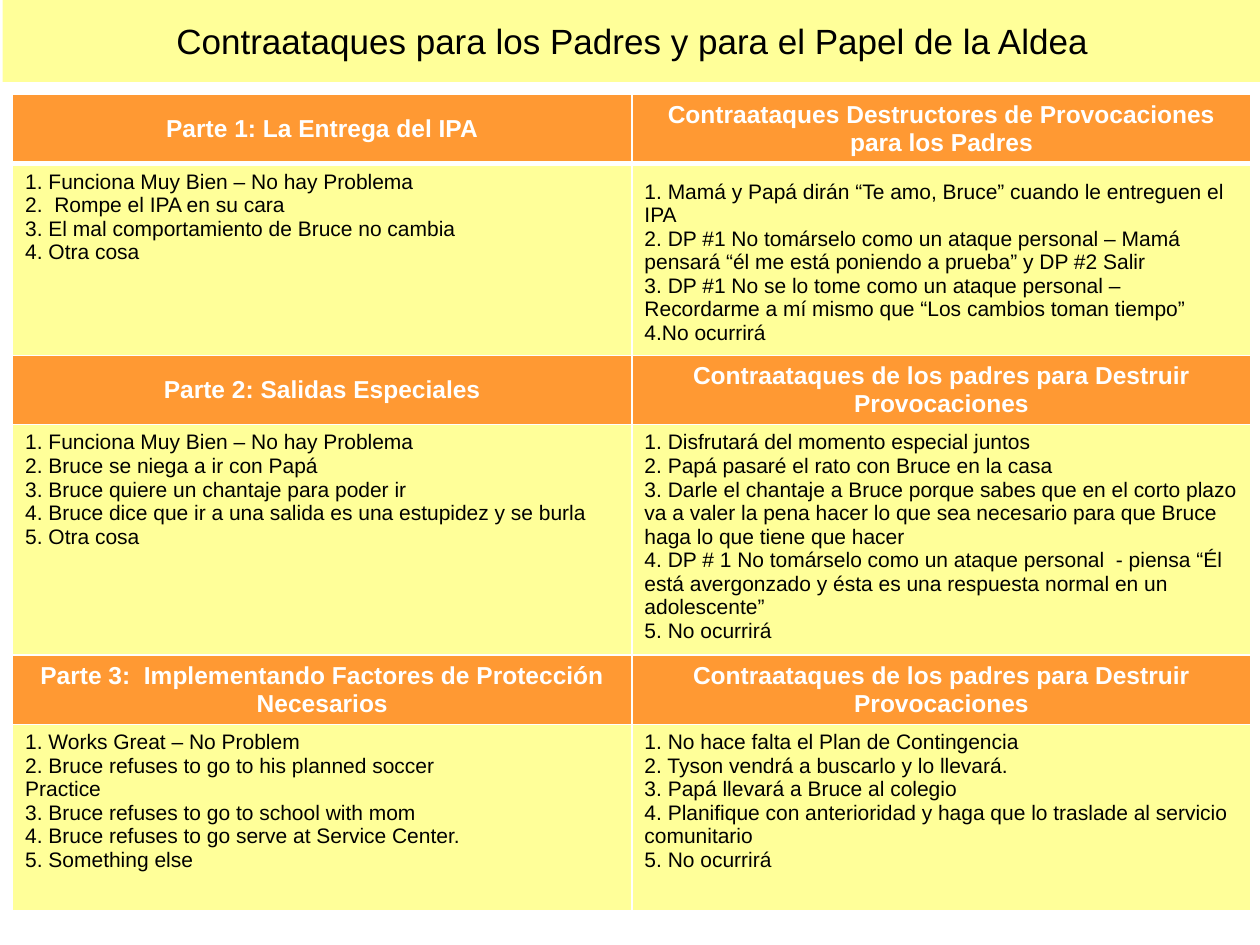
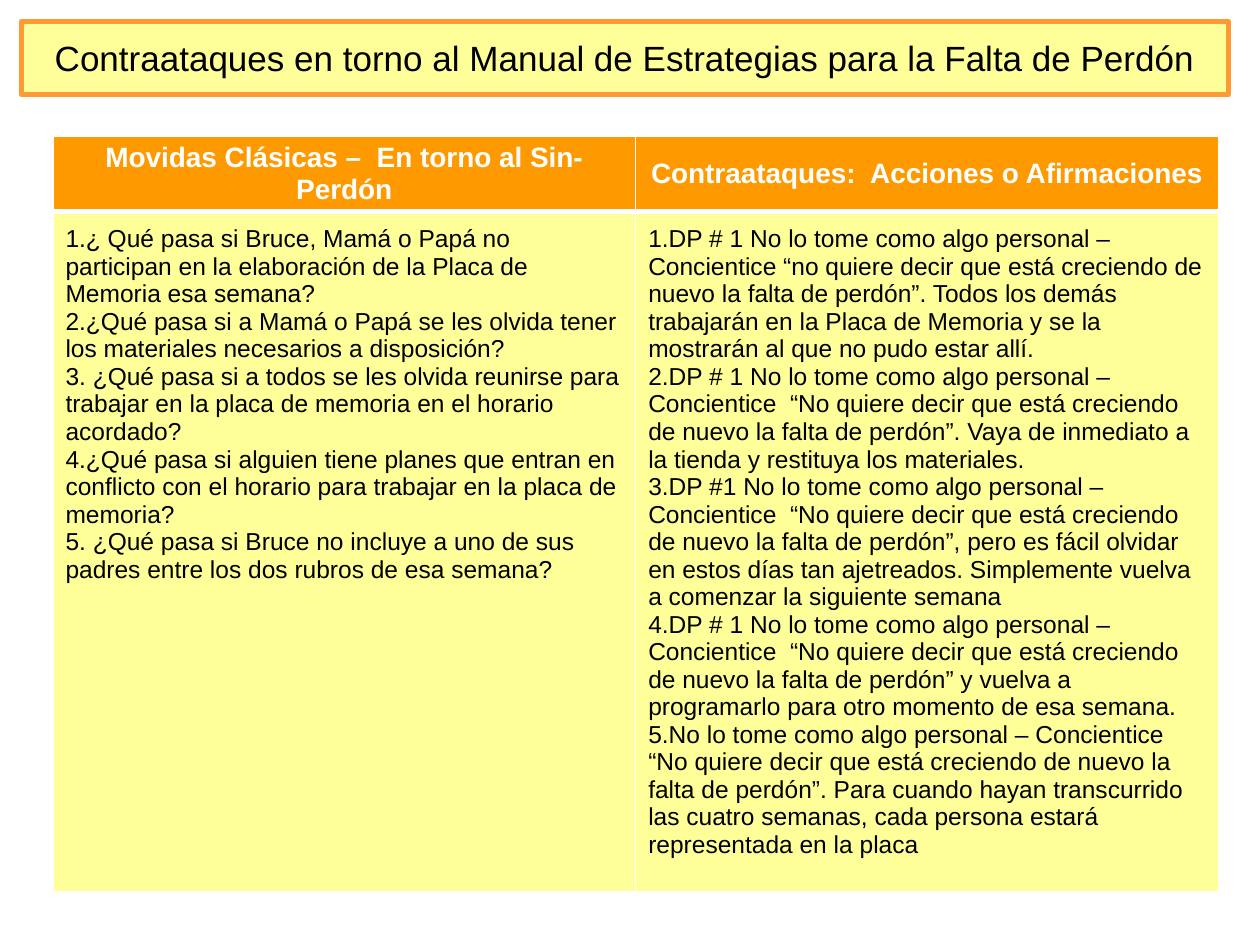
from dataclasses import dataclass

import pptx
import pptx.dml.color
import pptx.enum.text
import pptx.oxml
import pptx.oxml.ns
import pptx.util
from pptx.util import Inches, Length

FONT = "Arial"
COLORS = {
    "band": "FFFF99",
    "frame": "FF9933",
    "header": "FF9933",
    "header_bright": "FF9900",
    "title": "000000",
    "body": "000000",
    "header_text": "FFFFFF",
    "border": "FFFFFF",
}
TITLE_ONLY = 5
THIN, THICK = 1, 3  # border widths in points


@dataclass(frozen=True)
class Box:
    left: Length
    top: Length
    width: Length
    height: Length


@dataclass(frozen=True)
class Section:
    """A header row and the row of lists below it, left and right."""
    headers: tuple[str, str]
    lists: tuple[list[str], list[str]]
    list_height: Length
    top_margins: tuple[Length, Length] = (Inches(0.05), Inches(0.05))


@dataclass(frozen=True)
class TableStyle:
    header_color: str
    header_size: int
    body_size: int
    header_height: Length
    numbered: bool = False


def rgb(name: str) -> pptx.dml.color.RGBColor:
    return pptx.dml.color.RGBColor.from_string(COLORS[name])


def format_para(para, size: int, color: str, bold: bool, centered: bool) -> None:
    para.font.name = FONT
    para.font.size = pptx.util.Pt(size)
    para.font.bold = bold
    para.font.color.rgb = rgb(color)
    align = pptx.enum.text.PP_ALIGN
    para.alignment = align.CENTER if centered else align.LEFT


def number_para(para) -> None:
    """Number the paragraph automatically, with no indent."""
    properties = para._p.get_or_add_pPr()
    properties.set("marL", "0")
    properties.set("indent", "0")
    bullet = pptx.oxml.parse_xml(
        f'<a:buAutoNum {pptx.oxml.ns.nsdecls("a")} type="arabicPeriod"/>')
    properties.insert(0, bullet)


def set_borders(cell, top: int, bottom: int) -> None:
    properties = cell._tc.get_or_add_tcPr()
    sides = {"lnL": THIN, "lnR": THIN, "lnT": top, "lnB": bottom}
    for position, (side, points) in enumerate(sides.items()):
        line = pptx.oxml.parse_xml(
            f'<a:{side} {pptx.oxml.ns.nsdecls("a")} w="{pptx.util.Pt(points)}">'
            f'<a:solidFill><a:srgbClr val="{COLORS["border"]}"/></a:solidFill>'
            f'</a:{side}>')
        properties.insert(position, line)


def fill_cell(cell, texts: list[str], style: TableStyle, is_header: bool,
              top_margin: Length = Inches(0.05)) -> None:
    cell.fill.solid()
    cell.fill.fore_color.rgb = rgb(style.header_color if is_header else "band")
    cell.margin_left = cell.margin_right = Inches(0.1)
    cell.margin_top, cell.margin_bottom = top_margin, Inches(0.05)
    anchor = pptx.enum.text.MSO_ANCHOR
    cell.vertical_anchor = anchor.MIDDLE if is_header else anchor.TOP
    frame = cell.text_frame
    for index, text in enumerate(texts):
        para = frame.add_paragraph() if index else frame.paragraphs[0]
        para.text = text
        if is_header:
            format_para(para, style.header_size, "header_text", True, True)
        else:
            format_para(para, style.body_size, "body", False, False)
            if style.numbered:
                number_para(para)


def add_sections(page, box: Box, style: TableStyle, sections: list[Section]) -> None:
    table = page.shapes.add_table(2 * len(sections), 2, box.left, box.top,
                                  box.width, box.height).table
    table.horz_banding = False
    for column in table.columns:
        column.width = box.width // 2
    for index, section in enumerate(sections):
        header_row, list_row = 2 * index, 2 * index + 1
        table.rows[header_row].height = style.header_height
        table.rows[list_row].height = section.list_height
        rule = THIN if index else THICK
        for side in range(2):
            header = table.cell(header_row, side)
            fill_cell(header, [section.headers[side]], style, True)
            set_borders(header, THIN, rule)
            body = table.cell(list_row, side)
            fill_cell(body, section.lists[side], style, False,
                      section.top_margins[side])
            set_borders(body, rule, THIN)


def add_page(deck, title: str, box: Box, framed: bool):
    page = deck.slides.add_slide(deck.slide_layouts[TITLE_ONLY])
    band = page.shapes.title
    band.left, band.top, band.width, band.height = (
        box.left, box.top, box.width, box.height)
    band.fill.solid()
    band.fill.fore_color.rgb = rgb("band")
    if framed:
        band.line.color.rgb = rgb("frame")
        band.line.width = pptx.util.Pt(3)
    else:
        band.line.fill.background()
    band.text_frame.text = title
    band.text_frame.vertical_anchor = pptx.enum.text.MSO_ANCHOR.MIDDLE
    format_para(band.text_frame.paragraphs[0], 20, "title", False, True)
    return page


PARENT_COUNTERS = "Contraataques de los padres para Destruir Provocaciones"

VILLAGE_SECTIONS = [
    Section(
        ("Parte 1: La Entrega del IPA",
         "Contraataques Destructores de Provocaciones para los Padres"),
        (["1. Funciona Muy Bien – No hay Problema",
          "2.  Rompe el IPA en su cara",
          "3. El mal comportamiento de Bruce no cambia",
          "4. Otra cosa"],
         ["1. Mamá y Papá dirán “Te amo, Bruce” cuando le entreguen el IPA",
          "2. DP #1 No tomárselo como un ataque personal – Mamá pensará "
          "“él me está poniendo a prueba” y DP #2 Salir",
          "3. DP #1 No se lo tome como un ataque personal – Recordarme a mí "
          "mismo que “Los cambios toman tiempo”",
          "4.No ocurrirá"]),
        Inches(1.52), (Inches(0.05), Inches(0.13))),
    Section(
        ("Parte 2: Salidas Especiales", PARENT_COUNTERS),
        (["1. Funciona Muy Bien – No hay Problema",
          "2. Bruce se niega a ir con Papá",
          "3. Bruce quiere un chantaje para poder ir",
          "4. Bruce dice que ir a una salida es una estupidez y se burla",
          "5. Otra cosa"],
         ["1. Disfrutará del momento especial juntos",
          "2. Papá pasaré el rato con Bruce en la casa",
          "3. Darle el chantaje a Bruce porque sabes que en el corto plazo va a "
          "valer la pena hacer lo que sea necesario para que Bruce haga lo que "
          "tiene que hacer",
          "4. DP # 1 No tomárselo como un ataque personal  - piensa “Él está "
          "avergonzado y ésta es una respuesta normal en un adolescente”",
          "5. No ocurrirá"]),
        Inches(1.83)),
    Section(
        ("Parte 3:  Implementando Factores de Protección Necesarios",
         PARENT_COUNTERS),
        (["1. Works Great – No Problem",
          "2. Bruce refuses to go to his planned soccer",
          "Practice",
          "3. Bruce refuses to go to school with mom",
          "4. Bruce refuses to go serve at Service Center.",
          "5. Something else"],
         ["1. No hace falta el Plan de Contingencia",
          "2. Tyson vendrá a buscarlo y lo llevará.",
          "3. Papá llevará a Bruce al colegio",
          "4. Planifique con anterioridad y haga que lo traslade al servicio "
          "comunitario",
          "5. No ocurrirá"]),
        Inches(1.48)),
]

FORGIVENESS_SECTIONS = [
    Section(
        ("Movidas Clásicas –  En torno al Sin- Perdón",
         "Contraataques:  Acciones o Afirmaciones"),
        (["¿ Qué pasa si Bruce, Mamá o Papá no participan en la elaboración de "
          "la Placa de Memoria esa semana?",
          "¿Qué pasa si a Mamá o Papá se les olvida tener los materiales "
          "necesarios a disposición?",
          " ¿Qué pasa si a todos se les olvida reunirse para trabajar en la "
          "placa de memoria en el horario acordado?",
          "¿Qué pasa si alguien tiene planes que entran en conflicto con el "
          "horario para trabajar en la placa de memoria?",
          " ¿Qué pasa si Bruce no incluye a uno de sus padres entre los dos "
          "rubros de esa semana?"],
         ["DP # 1 No lo tome como algo personal – Concientice “no quiere decir "
          "que está creciendo de nuevo la falta de perdón”. Todos los demás "
          "trabajarán en la Placa de Memoria y se la mostrarán al que no pudo "
          "estar allí.",
          "DP # 1 No lo tome como algo personal – Concientice  “No quiere decir "
          "que está creciendo de nuevo la falta de perdón”. Vaya de inmediato a "
          "la tienda y restituya los materiales.",
          "DP #1 No lo tome como algo personal – Concientice  “No quiere decir "
          "que está creciendo de nuevo la falta de perdón”, pero es fácil "
          "olvidar en estos días tan ajetreados. Simplemente vuelva a comenzar "
          "la siguiente semana",
          "DP # 1 No lo tome como algo personal – Concientice  “No quiere decir "
          "que está creciendo de nuevo la falta de perdón” y vuelva a "
          "programarlo para otro momento de esa semana.",
          "No lo tome como algo personal – Concientice “No quiere decir "
          "que está creciendo de nuevo la falta de perdón”. Para cuando hayan "
          "transcurrido las cuatro semanas, cada persona estará representada en "
          "la placa"]),
        Inches(5.4), (Inches(0.11), Inches(0.11))),
]


def main() -> None:
    deck = pptx.Presentation()
    deck.slide_width, deck.slide_height = Inches(10), Inches(7.5)

    village = add_page(
        deck, "Contraataques para los Padres y para el Papel de la Aldea",
        Box(Inches(0.02), Inches(0), Inches(10), Inches(0.65)), framed=False)
    add_sections(
        village, Box(Inches(0.1), Inches(0.75), Inches(9.83), Inches(6.48)),
        TableStyle("header", 14, 12, Inches(0.55)), VILLAGE_SECTIONS)

    forgiveness = add_page(
        deck,
        "Contraataques en torno al Manual de Estrategias para la Falta de Perdón",
        Box(Inches(0.17), Inches(0.17), Inches(9.58), Inches(0.58)), framed=True)
    add_sections(
        forgiveness, Box(Inches(0.42), Inches(1.08), Inches(9.25), Inches(6)),
        TableStyle("header_bright", 16, 14, Inches(0.6), numbered=True),
        FORGIVENESS_SECTIONS)

    deck.save("out.pptx")


if __name__ == "__main__":
    main()
